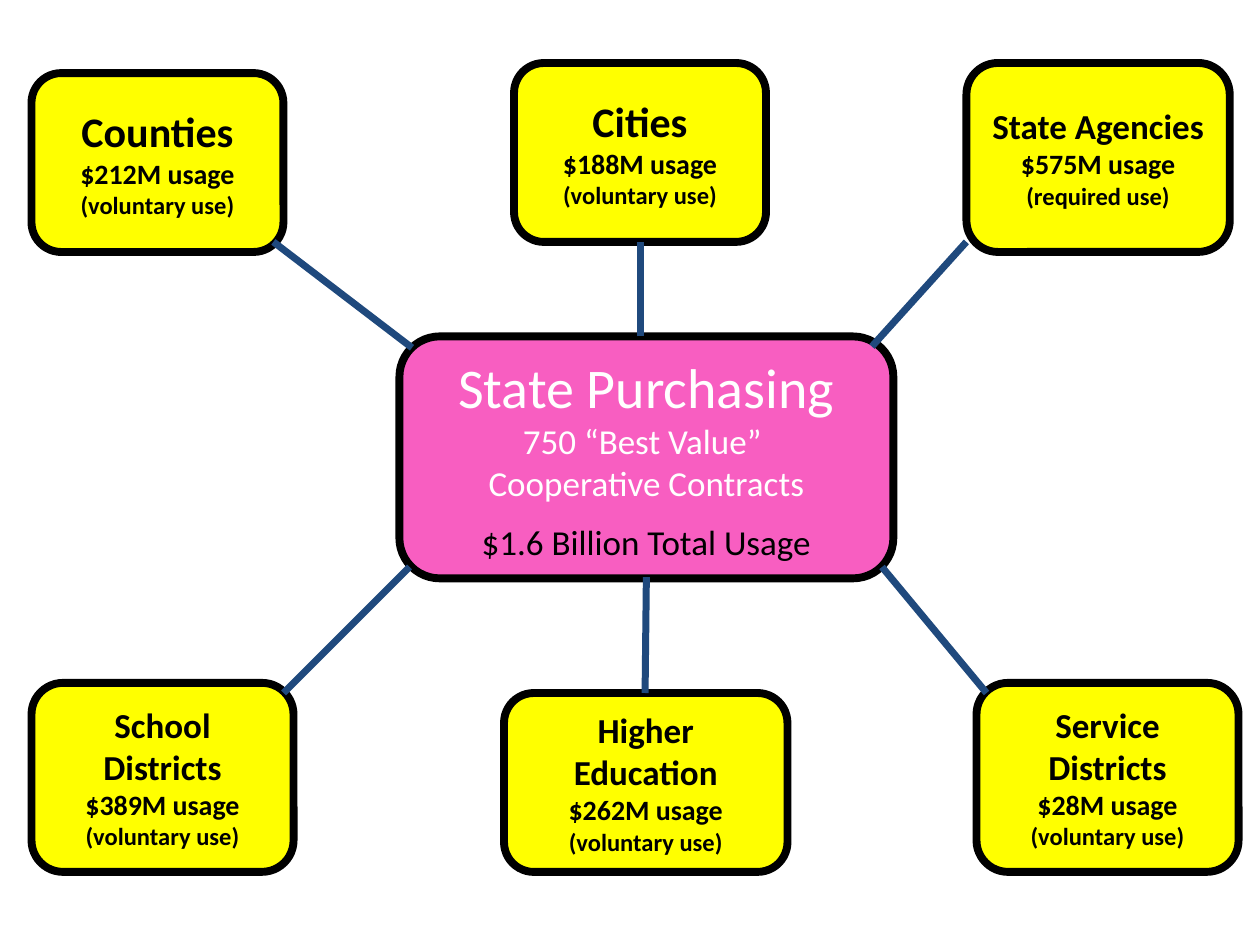
"""Build the state purchasing usage hub slide."""
from dataclasses import dataclass

from lxml import etree
from pptx import Presentation
from pptx import util as u
from pptx.dml.color import RGBColor
from pptx.enum import shapes, text
from pptx.oxml.ns import qn

COLORS = {
    "customer": "FFFF00",
    "hub": "F85EC1",
    "outline": "000000",
    "dark": "000000",
    "light": "FFFFFF",
    "spoke": "1F497D",
}


@dataclass
class Line:
    words: str
    size: int
    color: str = "dark"
    bold: bool = True
    space_before: float = 0


@dataclass
class Node:
    left: float
    top: float
    width: float
    height: float
    lines: list[Line]
    fill: str = "customer"


@dataclass
class Spoke:
    start: tuple[float, float]
    end: tuple[float, float]


def customer_lines(name: str, millions: int, size: int = 20, rule: str = "voluntary") -> list[Line]:
    """Return the three lines that describe one customer group."""
    return [Line(name, size), Line(f"${millions}M usage", 16), Line(f"({rule} use)", 14)]


NODES = [
    Node(7.75, 5.42, 2.08, 1.5, customer_lines("Service Districts", 28)),
    Node(4, 5.5, 2.25, 1.42, customer_lines("Higher Education", 262)),
    Node(7.67, 0.5, 2.09, 1.5, customer_lines("State Agencies", 575, rule="required")),
    Node(0.25, 5.42, 2.08, 1.5, customer_lines("School Districts", 389)),
    Node(4.08, 0.5, 2, 1.42, customer_lines("Cities", 188, size=24)),
    Node(0.25, 0.58, 2, 1.42, customer_lines("Counties", 212, size=24)),
    Node(3.17, 2.67, 3.92, 1.92, [
        Line("State Purchasing", 32, "light", False),
        Line("750 “Best Value” ", 20, "light", False),
        Line("Cooperative Contracts", 20, "light", False),
        Line("$1.6 Billion Total Usage", 20, "dark", False, 9.75),
    ], "hub"),
]

SPOKES = [
    Spoke((5.12, 5.5), (5.13, 4.58)),
    Spoke((7, 4.5), (7.83, 5.5)),
    Spoke((7.67, 1.92), (6.92, 2.75)),
    Spoke((3.25, 4.5), (2.25, 5.5)),
    Spoke((2.17, 1.92), (3.27, 2.76)),
    Spoke((5.08, 2.67), (5.08, 1.92)),
]


def rgb(name: str) -> RGBColor:
    """Look up a named colour."""
    return RGBColor.from_string(COLORS[name])


def draw_node(page, node: Node) -> None:
    """Draw a rounded box with its centred lines of text."""
    box = page.shapes.add_shape(
        shapes.MSO_SHAPE.ROUNDED_RECTANGLE,
        u.Inches(node.left), u.Inches(node.top), u.Inches(node.width), u.Inches(node.height))
    box.shadow.inherit = False
    box.fill.solid()
    box.fill.fore_color.rgb = rgb(node.fill)
    box.line.color.rgb = rgb("outline")
    box.line.width = u.Pt(4.5)
    frame = box.text_frame
    frame.word_wrap = True
    frame.vertical_anchor = text.MSO_ANCHOR.MIDDLE
    frame.text = "\n".join(line.words for line in node.lines)
    for para, line in zip(frame.paragraphs, node.lines):
        para.alignment = text.PP_ALIGN.CENTER
        para.space_before = u.Pt(line.space_before)
        for span in para.runs:
            span.font.name = "Calibri"
            span.font.size = u.Pt(line.size)
            span.font.bold = line.bold
            span.font.color.rgb = rgb(line.color)


def draw_spoke(page, spoke: Spoke) -> None:
    """Draw a straight line between the hub and a customer group."""
    connector = page.shapes.add_connector(
        shapes.MSO_CONNECTOR.STRAIGHT, *(u.Inches(value) for value in spoke.start + spoke.end))
    connector.line.color.rgb = rgb("spoke")
    connector.line.width = u.Pt(4)
    etree.SubElement(connector._element.spPr, qn("a:effectLst"))


def main() -> None:
    """Create the deck and save it."""
    deck = Presentation()
    deck.slide_width, deck.slide_height = u.Inches(10), u.Inches(7.5)
    page = deck.slides.add_slide(deck.slide_layouts[6])
    for node in NODES:
        draw_node(page, node)
    for spoke in SPOKES:
        draw_spoke(page, spoke)
    deck.save("out.pptx")


if __name__ == "__main__":
    main()
